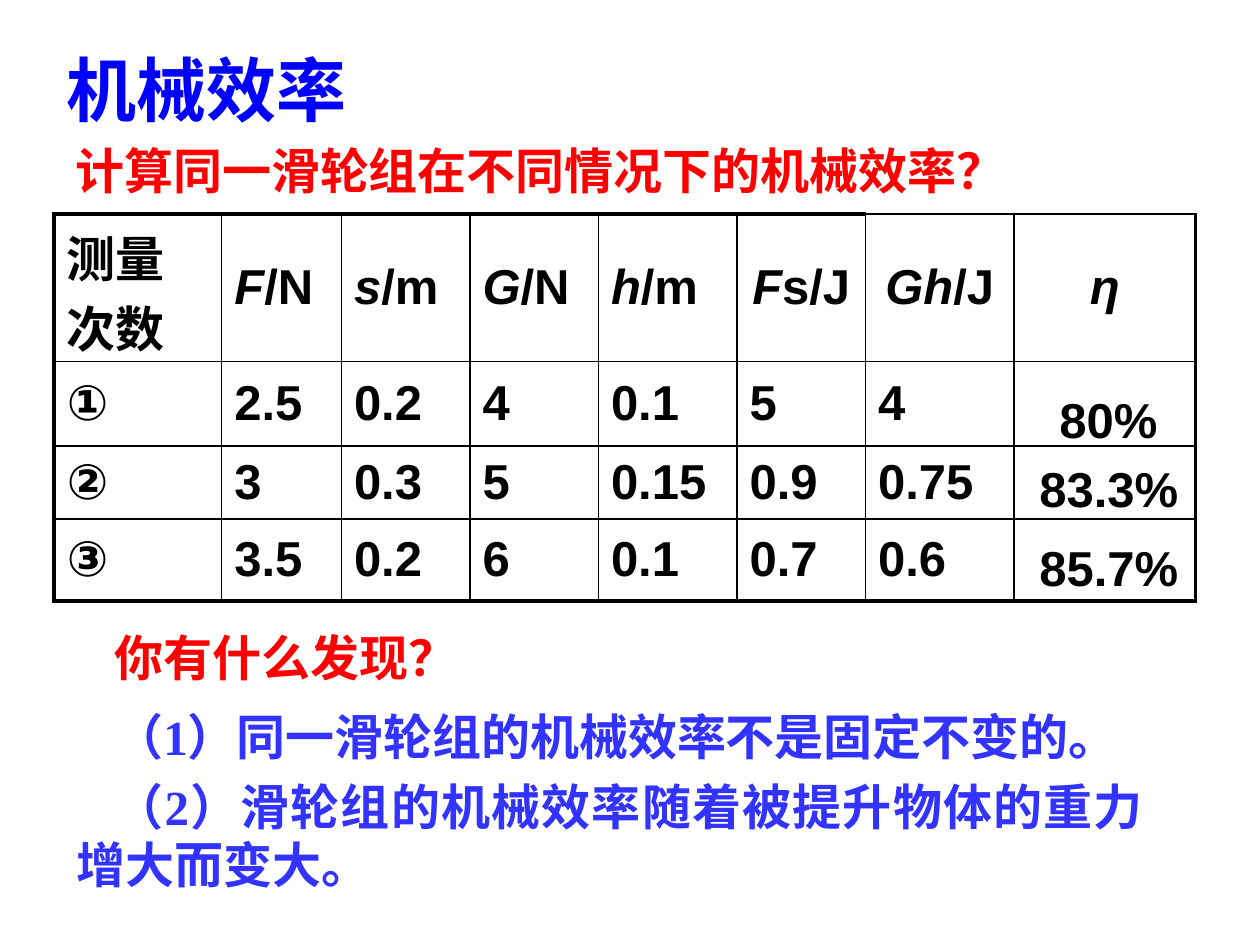
from dataclasses import dataclass

from lxml.etree import SubElement
from pptx import Presentation
from pptx.dml.color import RGBColor
from pptx.enum.text import MSO_ANCHOR as Anchor, MSO_AUTO_SIZE as AutoSize, PP_ALIGN as Align
from pptx.oxml.ns import qn
from pptx.util import Inches, Pt


@dataclass(frozen=True)
class Theme:
    title: str = "0000FF"
    question: str = "FF0000"
    finding: str = "3333FF"
    ink: str = "000000"
    sans: str = "Arial"
    serif: str = "Times New Roman"
    title_size: float = 40
    body_size: float = 28
    space_before: float = 5.6
    thin: float = 1
    thick: float = 2.25


class SlideBuilder:
    """Places styled elements on a slide gridded in 100 columns and 75 rows."""

    def __init__(self, presentation, theme):
        self.theme = theme
        self.column = presentation.slide_width / 100
        self.row = presentation.slide_height / 75
        self.slide = presentation.slides.add_slide(presentation.slide_layouts[5])

    def box(self, left, top, width, height):
        return (round(left * self.column), round(top * self.row),
                round(width * self.column), round(height * self.row))

    def style(self, paragraph, color, font=None, size=None):
        paragraph.font.name = font or self.theme.sans
        paragraph.font.size = Pt(size or self.theme.body_size)
        paragraph.font.bold = True
        paragraph.font.color.rgb = RGBColor.from_string(color)

    def fill_frame(self, shape, text, wrap):
        frame = shape.text_frame
        frame.text = text
        frame.word_wrap = wrap
        frame.auto_size = AutoSize.SHAPE_TO_FIT_TEXT
        frame.vertical_anchor = Anchor.TOP
        return frame.paragraphs[0]

    def title(self, text, *place):
        shape = self.slide.shapes.title
        shape.left, shape.top, shape.width, shape.height = self.box(*place)
        paragraph = self.fill_frame(shape, text, False)
        paragraph.alignment = Align.LEFT
        self.style(paragraph, self.theme.title, size=self.theme.title_size)

    def statement(self, text, color, *place):
        shape = self.slide.shapes.add_textbox(*self.box(*place))
        paragraph = self.fill_frame(shape, text, True)
        paragraph.alignment = Align.JUSTIFY
        self.style(paragraph, color, self.theme.serif)
        properties = paragraph._p.get_or_add_pPr()
        properties.set("marL", "0")
        properties.set("indent", str(Inches(0.3)))

    def answer(self, text, *place, space_before=0):
        shape = self.slide.shapes.add_textbox(*self.box(*place))
        paragraph = self.fill_frame(shape, text, False)
        paragraph.space_before = Pt(space_before)
        self.style(paragraph, self.theme.ink)

    def border(self, cell, side, width):
        line = SubElement(cell._tc.get_or_add_tcPr(), qn(f"a:ln{side}"), w=str(Pt(width)))
        fill = SubElement(line, qn("a:solidFill"))
        SubElement(fill, qn("a:srgbClr"), val=self.theme.ink)

    def cell(self, cell, symbol, unit, thick_sides, centered):
        for side in "LRTB":
            self.border(cell, side, self.theme.thick if side in thick_sides else self.theme.thin)
        cell.fill.background()
        cell.vertical_anchor = Anchor.MIDDLE
        paragraph = cell.text_frame.paragraphs[0]
        paragraph.alignment = Align.CENTER if centered else Align.LEFT
        paragraph.space_before = Pt(self.theme.space_before)
        self.style(paragraph, self.theme.ink)
        for text, italic in ((symbol, True), (unit, False)):
            if text:
                run = paragraph.add_run()
                run.text = text
                run.font.italic = italic

    def table(self, rows, widths, heights, left, top):
        place = self.box(left, top, sum(widths), sum(heights))
        table = self.slide.shapes.add_table(len(rows), len(widths), *place).table
        table.first_row = table.horz_banding = False
        for column, width in zip(table.columns, widths):
            column.width = round(width * self.column)
        for row, height in zip(table.rows, heights):
            row.height = round(height * self.row)
        last_row, last_column = len(rows) - 1, len(widths) - 1
        for r, row in enumerate(rows):
            for c, (symbol, unit) in enumerate(row):
                edges = {"L": c == 0, "R": c == last_column,
                         "T": r == 0 and c < 6, "B": r == last_row}
                thick_sides = [side for side, outer in edges.items() if outer]
                self.cell(table.cell(r, c), symbol, unit, thick_sides, r == 0 and c > 4)


HEADER = [("", "测量次数"), ("F", "/N"), ("s", "/m"), ("G", "/N"), ("h", "/m"),
          ("F", "s/J"), ("Gh", "/J"), ("η", "")]
MEASUREMENTS = [
    ["①", "2.5", "0.2", "4", "0.1", "5", "4", ""],
    ["②", "3", "0.3", "5", "0.15", "0.9", "0.75", ""],
    ["③", "3.5", "0.2", "6", "0.1", "0.7", "0.6", ""],
]
COLUMN_WIDTHS = [13.3, 9.5, 10.2, 10.2, 11, 10.2, 11.8, 14.4]
ROW_HEIGHTS = [11.7, 6.7, 5.8, 6.5]


def main():
    presentation = Presentation()
    presentation.slide_width, presentation.slide_height = Inches(10), Inches(7.5)
    theme = Theme()
    builder = SlideBuilder(presentation, theme)
    builder.title("机械效率", 4.3, 3.2, 25.9, 7.7)
    rows = [HEADER] + [[("", value) for value in row] for row in MEASUREMENTS]
    builder.table(rows, COLUMN_WIDTHS, ROW_HEIGHTS, 4.3, 17)
    builder.statement("计算同一滑轮组在不同情况下的机械效率？", theme.question, 2, 10.7, 88.5, 5.7)
    builder.statement("你有什么发现？", theme.question, 5.1, 49.3, 33.9, 5.7)
    builder.answer("80%", 83.1, 30.4, 9.8, 5.7, space_before=theme.space_before)
    builder.answer("83.3%", 81.5, 35.9, 13.1, 5.7)
    builder.answer("85.7%", 81.5, 42.2, 13.1, 5.7)
    builder.statement("（1）同一滑轮组的机械效率不是固定不变的。", theme.finding, 5.1, 55.6, 86.6, 5.7)
    builder.statement("（2）滑轮组的机械效率随着被提升物体的重力增大而变大。",
                      theme.finding, 5.1, 61.1, 86.6, 10.3)
    presentation.save("out.pptx")


if __name__ == "__main__":
    main()
